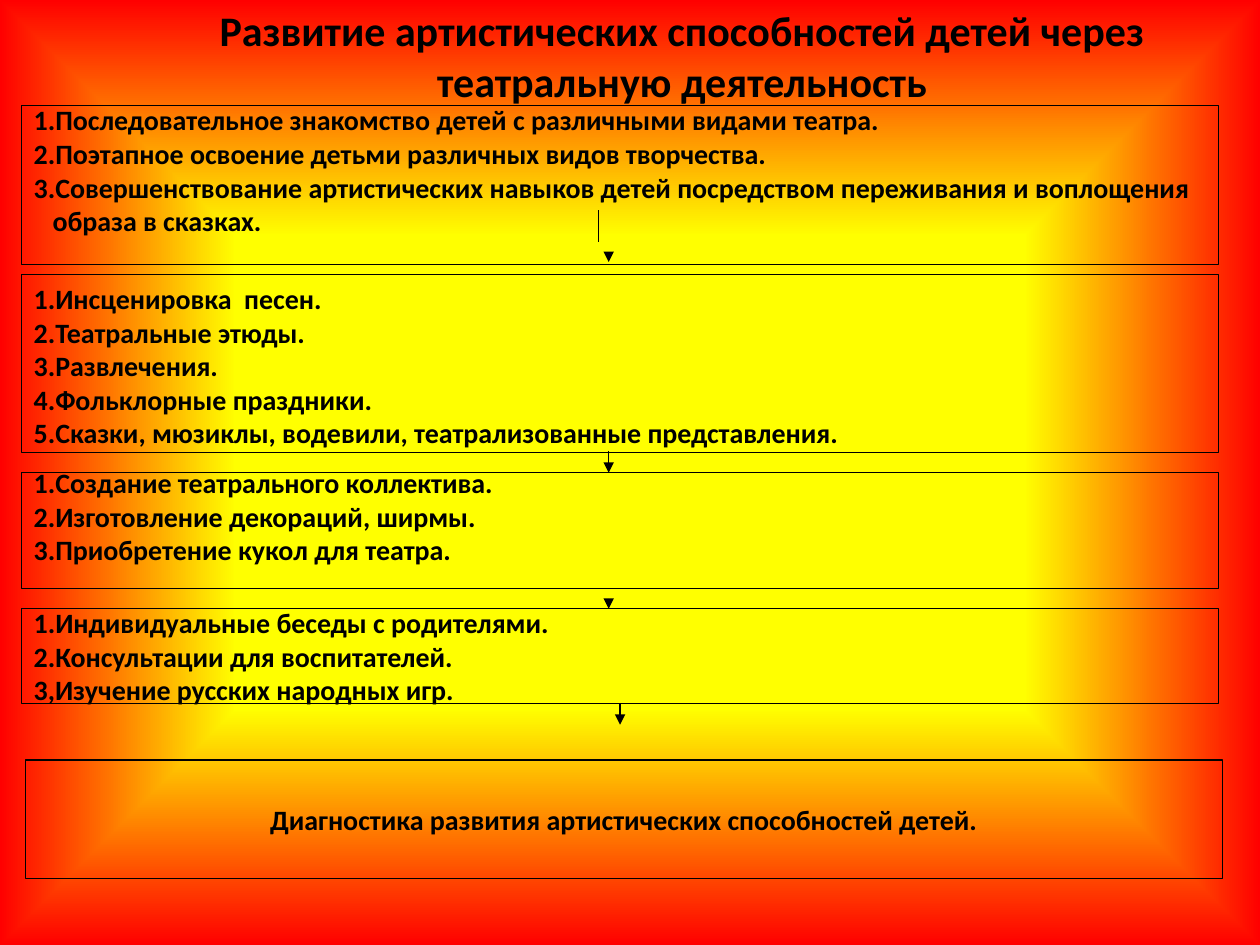
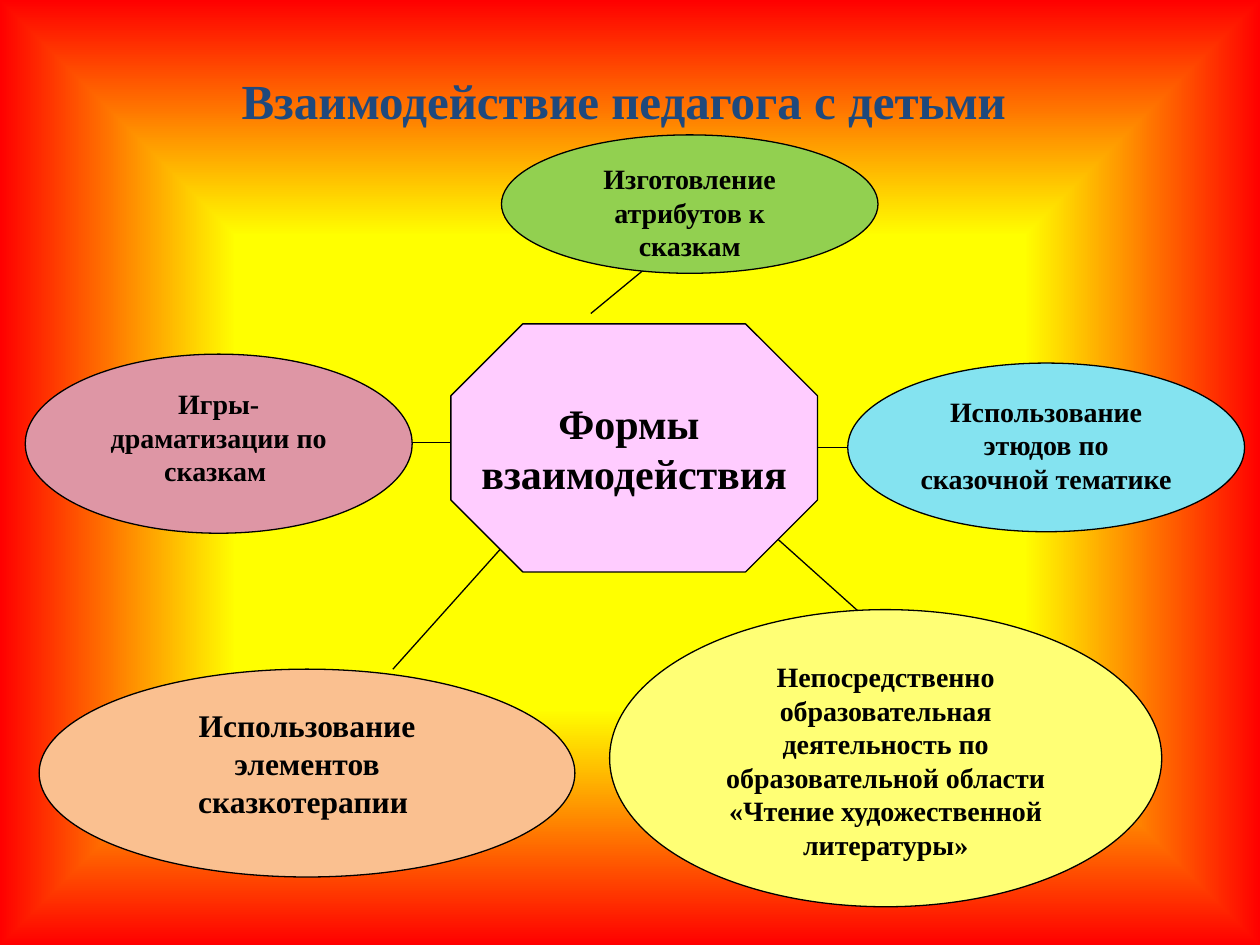
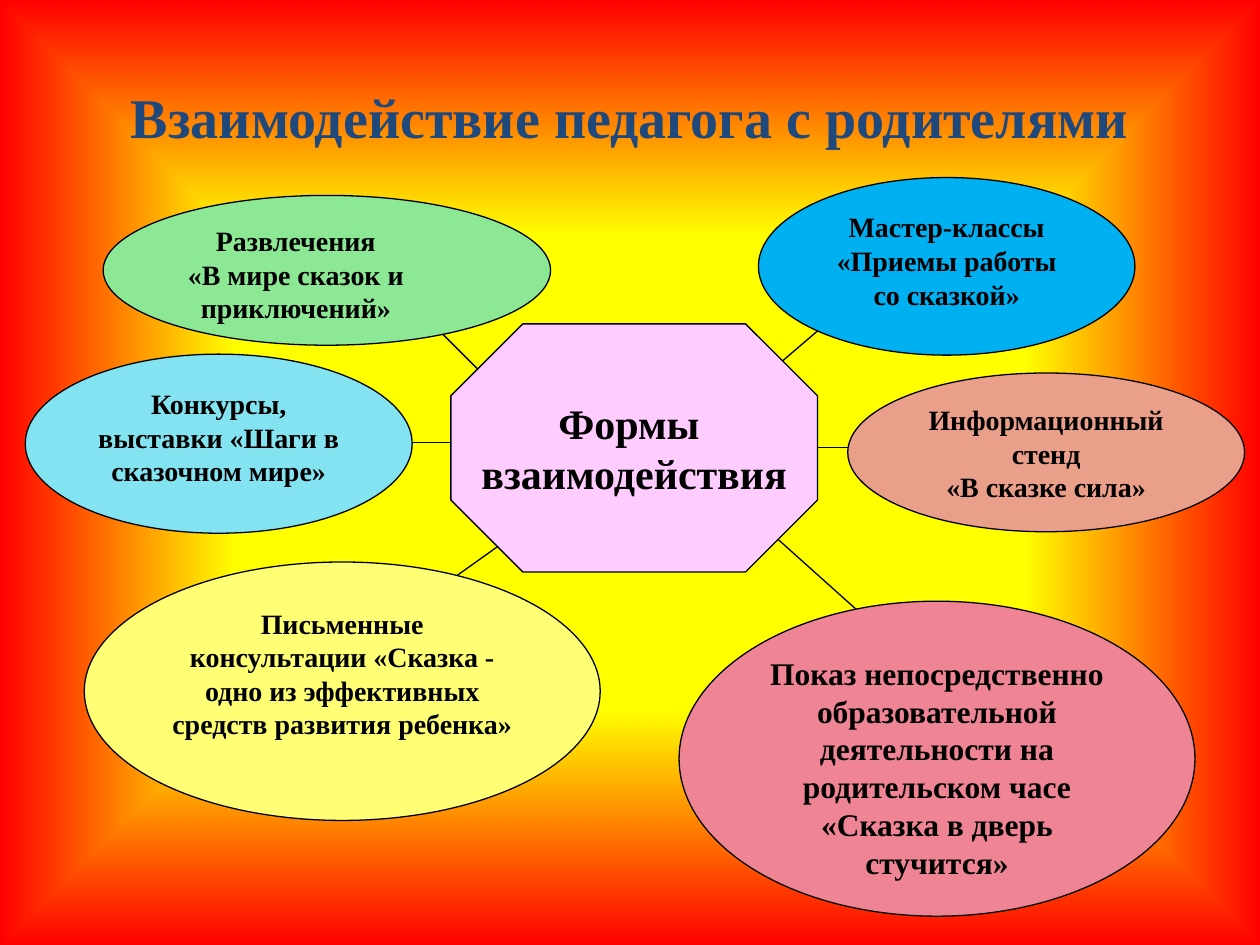
"""Build three slides on children's theatre activities and the forms of interaction around them."""
from lxml import etree
from pptx import Presentation
from pptx import util as u
from pptx.dml.color import RGBColor
from pptx.enum import shapes, text
from pptx.oxml.ns import qn

COLORS = {
    "ink": "000000", "heading": "1F497D", "center": "FFFF00", "edge": "FF0000",
    "hub": "FFCCFF", "yellow": "FFFF75", "aqua": "84E3F0", "peach": "FAC090",
    "rose": "DE96A5", "leaf": "92D050", "pink": "EF8594", "salmon": "EA9F8A",
    "mint": "8CE895", "blue": "00B0F0",
}
SANS, SERIF = "Calibri", "Times New Roman"
LEFT, CENTER = text.PP_ALIGN.LEFT, text.PP_ALIGN.CENTER
TOP, MIDDLE = text.MSO_ANCHOR.TOP, text.MSO_ANCHOR.MIDDLE
INSET = 0.13
HANGING = 0.38

PLAN_TITLE = "Развитие артистических способностей детей через театральную деятельность"
PLAN_LEFT, PLAN_WIDTH = 0.43, 24.13
# top, height, extra top inset, extra bottom inset, lines
PLAN_STEPS = [
    (2.13, 3.2, 0, 0.6, [
        "1.Последовательное знакомство детей с различными видами театра.",
        "2.Поэтапное освоение детьми различных видов творчества.",
        "3.Совершенствование артистических навыков детей посредством переживания "
        "и воплощения образа в сказках."]),
    (5.54, 3.58, 0.08, 0, [
        "1.Инсценировка  песен.", "2.Театральные этюды.", "3.Развлечения.",
        "4.Фольклорные праздники.",
        "5.Сказки, мюзиклы, водевили, театрализованные представления."]),
    (9.53, 2.34, 0, 0.6, [
        "1.Создание театрального коллектива.", "2.Изготовление декораций, ширмы.",
        "3.Приобретение кукол для театра."]),
    (12.27, 1.91, 0, 0, [
        "1.Индивидуальные беседы с родителями.", "2.Консультации для воспитателей.",
        "3,Изучение русских народных игр."]),
]
DIAGNOSTICS = ((0.51, 15.32, 24.13, 2.39),
               ["Диагностика развития артистических способностей детей."])
PLAN_STEM = (12.07, 4.24, 12.07, 4.88)
PLAN_ARROWS = [(12.27, 5.08, 5.28), (12.27, 9.09, 9.53), (12.27, 12.07, 12.27), (12.5, 14.17, 14.61)]

HUB = ((9.09, 6.53, 7.39, 5), ["Формы ", "взаимодействия"])
SHARED_SPOKES = [(15.7, 9.02, 17.91, 9.02), (15.29, 10.52, 17.3, 12.32), (7.9, 8.92, 9.3, 8.92)]
WHEELS = [
    {
        "title": "Взаимодействие педагога с детьми ", "title_size": 28,
        "title_box": (1.27, 1.12, 22.86, 1.8),
        "spokes": [(7.92, 13.49, 10.31, 10.82), (11.91, 6.32, 13.11, 5.33)],
        "ovals": [
            ((12.29, 12.29, 11.13, 5.99), "yellow", 16,
             ["Непосредственно образовательная деятельность по образовательной области "
              "«Чтение художественной литературы»"]),
            ((17.09, 7.32, 8, 3.4), "aqua", 16, ["Использование этюдов по сказочной тематике"]),
            ((0.79, 13.49, 10.8, 4.19), "peach", 18, ["Использование элементов сказкотерапии "]),
            ((0.51, 7.14, 7.8, 3.61), "rose", 16, ["Игры-драматизации по сказкам "]),
            ((10.11, 2.72, 7.59, 2.79), "leaf", 16, ["Изготовление атрибутов к сказкам"]),
        ],
    },
    {
        "title": "Взаимодействие педагога с родителями", "title_size": 32,
        "title_box": (1.27, 0.76, 22.86, 3.18),
        "spokes": [(8.51, 6.32, 9.91, 7.72), (8.92, 11.81, 10.31, 10.82), (15.49, 7.52, 16.89, 6.32)],
        "ovals": [
            ((13.69, 12.12, 10.4, 6.35), "pink", 18,
             ["Показ непосредственно образовательной деятельности на родительском часе "
              "«Сказка в дверь стучится»"]),
            ((17.09, 7.52, 8, 3.2), "salmon", 16, ["Информационный стенд", "«В сказке сила»"]),
            ((2.08, 3.94, 9.02, 3.02), "mint", 16,
             [("Развлечения", 1.25), "«В мире сказок и приключений»"]),
            ((1.7, 11.33, 10.4, 5.21), "yellow", 16,
             ["Письменные консультации «Сказка - одно из эффективных средств развития ребенка»"]),
            ((0.51, 7.14, 7.8, 3.61), "aqua", 16, ["Конкурсы, выставки «Шаги в сказочном мире»"]),
            ((15.29, 3.58, 7.59, 3.58), "blue", 16, ["Мастер-классы «Приемы работы со сказкой»"]),
        ],
    },
]


def color(name):
    return RGBColor.from_string(COLORS[name])


def lengths(values):
    return [u.Cm(value) for value in values]


def set_format(target, values):
    for name, value in values.items():
        setattr(target, name, value)


def write(shape, lines, size, font=SERIF, ink="ink", align=CENTER, anchor=TOP,
          wrap=True, extra_top=0, extra_bottom=0, hanging=0):
    frame = shape.text_frame
    set_format(frame, {
        "word_wrap": wrap, "vertical_anchor": anchor,
        "margin_top": u.Cm(INSET + extra_top), "margin_bottom": u.Cm(INSET + extra_bottom)})
    for index, line in enumerate(lines):
        words, right = line if isinstance(line, tuple) else (line, 0)
        paragraph = frame.add_paragraph() if index else frame.paragraphs[0]
        paragraph.alignment = align
        indents = {"marL": hanging, "indent": -hanging, "marR": right}
        for name, value in indents.items():
            if value:
                paragraph._p.get_or_add_pPr().set(name, str(u.Cm(value)))
        run = paragraph.add_run()
        run.text = words
        set_format(run.font, {"size": u.Pt(size), "name": font, "bold": True})
        run.font.color.rgb = color(ink)


def outline(shape):
    shape.line.color.rgb = color("ink")
    shape.line.width = u.Pt(0.75)


def add_block(slide, kind, box, lines, size, fill=None, **style):
    shape = slide.shapes.add_shape(kind, *lengths(box))
    shape.shadow.inherit = False
    if fill:
        shape.fill.solid()
        shape.fill.fore_color.rgb = color(fill)
    else:
        shape.fill.background()
    outline(shape)
    write(shape, lines, size, **style)
    return shape


def add_line(slide, ends, arrow=False):
    line = slide.shapes.add_connector(shapes.MSO_CONNECTOR.STRAIGHT, *lengths(ends))
    outline(line)
    if arrow:
        etree.SubElement(line.line._get_or_add_ln(), qn("a:tailEnd"), type="triangle")
    etree.SubElement(line._element.spPr, qn("a:effectLst"))


def add_slide(presentation, title, box, size, **style):
    slide = presentation.slides.add_slide(presentation.slide_layouts[6])
    fill = slide.background.fill
    fill.gradient()
    for stop, (position, name) in zip(fill.gradient_stops, [(0.5, "center"), (1, "edge")]):
        stop.position = position
        stop.color.rgb = color(name)
    gradient = slide.element.find(".//" + qn("a:gradFill"))
    gradient.remove(gradient.find(qn("a:lin")))
    focus = etree.Element(qn("a:path"), path="shape")
    gradient.find(qn("a:gsLst")).addnext(focus)
    etree.SubElement(focus, qn("a:fillToRect"), {side: "50000" for side in "ltrb"})
    write(slide.shapes.add_textbox(*lengths(box)), [title], size, anchor=MIDDLE, **style)
    return slide


def build_plan(presentation):
    slide = add_slide(presentation, PLAN_TITLE, (2.97, 0.43, 21.56, 1.37), 24, font=SANS)
    rectangle = shapes.MSO_SHAPE.RECTANGLE
    for top, height, extra_top, extra_bottom, lines in PLAN_STEPS:
        add_block(slide, rectangle, (PLAN_LEFT, top, PLAN_WIDTH, height), lines, 16,
                  font=SANS, align=LEFT, anchor=MIDDLE, hanging=HANGING,
                  extra_top=extra_top, extra_bottom=extra_bottom)
    add_block(slide, rectangle, *DIAGNOSTICS, 16, font=SANS, anchor=MIDDLE)
    add_line(slide, PLAN_STEM)
    for x, start, end in PLAN_ARROWS:
        add_line(slide, (x, start, x, end), arrow=True)


def build_wheel(presentation, wheel):
    slide = add_slide(presentation, wheel["title"], wheel["title_box"], wheel["title_size"],
                      ink="heading")
    for ends in SHARED_SPOKES + wheel["spokes"]:
        add_line(slide, ends)
    for box, fill, size, lines in wheel["ovals"]:
        add_block(slide, shapes.MSO_SHAPE.OVAL, box, lines, size, fill)
    hub = add_block(slide, shapes.MSO_SHAPE.OCTAGON, *HUB, 24, "hub", anchor=MIDDLE, wrap=False)
    hub.adjustments[0] = 0.29


def main():
    presentation = Presentation()
    set_format(presentation, {"slide_width": u.Cm(25.4), "slide_height": u.Cm(19.05)})
    build_plan(presentation)
    for wheel in WHEELS:
        build_wheel(presentation, wheel)
    presentation.save("out.pptx")


if __name__ == "__main__":
    main()
